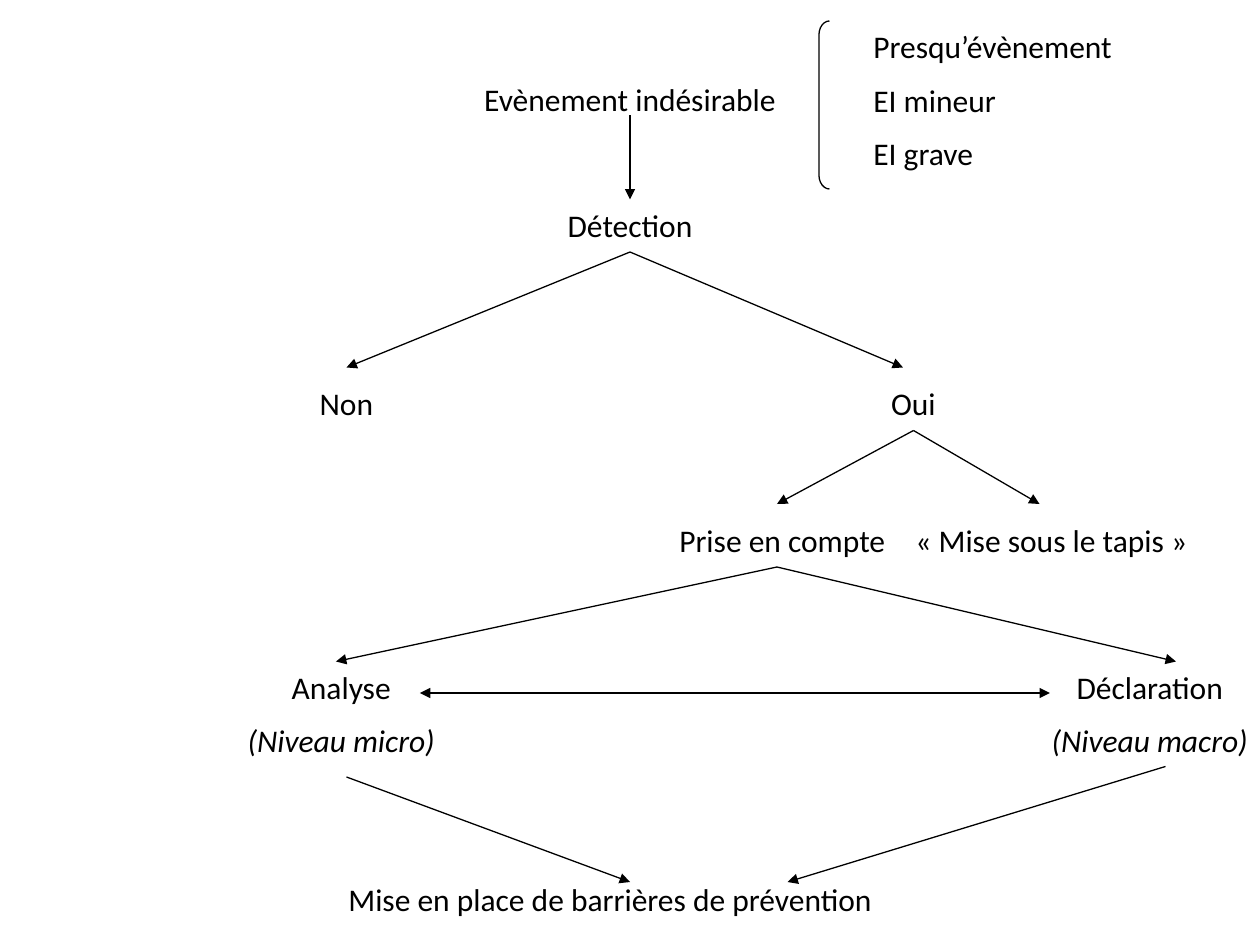
from lxml import etree
from pptx import Presentation
from pptx.dml.color import RGBColor
from pptx.enum.shapes import MSO_CONNECTOR, MSO_SHAPE
from pptx.enum.text import MSO_AUTO_SIZE, PP_ALIGN
from pptx.oxml.ns import qn
from pptx.util import Pt

LEFT, MID = PP_ALIGN.LEFT, PP_ALIGN.CENTER
FIT = MSO_AUTO_SIZE.SHAPE_TO_FIT_TEXT
LINE = MSO_CONNECTOR.STRAIGHT
BRACKET = MSO_SHAPE.LEFT_BRACKET
SCALE = 7620
COLORS = {"ink": "000000", "page": "FFFFFF"}
FONT = {"name": "Calibri", "size": Pt(18)}


def px(*sizes):
    return [size * SCALE for size in sizes]


def ink(line):
    line.color.rgb = RGBColor.from_string(COLORS["ink"])
    line.width = Pt(0.75)


def text(slide, box, words, align=MID, slant=()):
    frame = slide.shapes.add_textbox(*px(*box)).text_frame
    frame.word_wrap = True
    frame.auto_size = FIT
    for i, word in enumerate(words):
        para = frame.paragraphs[0] if i == 0 else frame.add_paragraph()
        para.alignment = align
        para.space_before = Pt(9)
        run = para.add_run()
        run.text = word
        for key, value in FONT.items():
            setattr(run.font, key, value)
        run.font.color.rgb = RGBColor.from_string(COLORS["ink"])
        if i in slant:
            run.font.italic = True


def arrow(slide, start, end, tips=("tailEnd",)):
    link = slide.shapes.add_connector(LINE, *px(*start, *end))
    ink(link.line)
    line = link.line._get_or_add_ln()
    for tip in tips:
        etree.SubElement(line, qn("a:" + tip), type="triangle")
    etree.SubElement(link._element.spPr, qn("a:effectLst"))


def fork(slide, start, ends):
    for end in ends:
        arrow(slide, start, end)


def event(slide, box):
    x, y, w, h = box
    text(slide, (x, y + 50, 400, 48), ["Evènement indésirable"])
    arrow(slide, (x + 200, y + 90), (x + 200, y + 170))
    mark = slide.shapes.add_shape(BRACKET, *px(x + 380, y, 10, h))
    mark.shadow.inherit = False
    mark.fill.background()
    ink(mark.line)
    mark.adjustments[0] = 1.33
    kinds = ["Presqu’évènement", "EI mineur", "EI grave"]
    text(slide, (x + w - 290, y, 290, 156), kinds, LEFT)


def detect(slide, box):
    x, y, w, h = box
    top = (x + 330, y + 50)
    text(slide, (x + 220, y, 220, 48), ["Détection"])
    fork(slide, top, [(x + 60, y + 160), (x + 590, y + 160)])
    for left, word in ((x, "Non"), (x + w - 120, "Oui")):
        text(slide, (left, y + h - 48, 120, 48), [word])


def choice(slide, box):
    x, y, w, h = box
    fork(slide, (x + 260, y), [(x + 130, y + 70), (x + 380, y + 70)])
    text(slide, (x, y + h - 48, 270, 48), ["Prise en compte"])
    text(slide, (x + w - 320, y + h - 48, 320, 48),
         ["«\u00a0Mise sous le tapis\u00a0»"], LEFT)


def levels(slide, box):
    x, y, w, h = box
    fork(slide, (x + 550, y), [(x + 130, y + 90), (x + 930, y + 90)])
    pairs = ((x, ["Analyse", "(Niveau micro)"]),
             (x + w - 270, ["Déclaration", "(Niveau macro)"]))
    for left, words in pairs:
        text(slide, (left, y + h - 102, 270, 102), words, slant=(1,))
    arrow(slide, (x + 210, y + 120), (x + 810, y + 120),
          ("headEnd", "tailEnd"))


def result(slide, box):
    x, y, w, h = box
    arrow(slide, (x + 10, y + 10), (x + 280, y + 110))
    arrow(slide, (x + w, y), (x + 430, y + 110))
    text(slide, (x, y + h - 48, 570, 48),
         ["Mise en place de barrières de prévention"], LEFT)


def main():
    deck = Presentation()
    deck.slide_width, deck.slide_height = px(1200, 900)
    slide = deck.slides.add_slide(deck.slide_layouts[6])
    back = slide.background.fill
    back.solid()
    back.fore_color.rgb = RGBColor.from_string(COLORS["page"])
    event(slide, (400, 20, 710, 160))
    detect(slide, (270, 190, 660, 218))
    choice(slide, (610, 410, 570, 128))
    levels(slide, (190, 540, 1040, 192))
    result(slide, (320, 730, 790, 150))
    deck.save("out.pptx")


if __name__ == "__main__":
    main()
